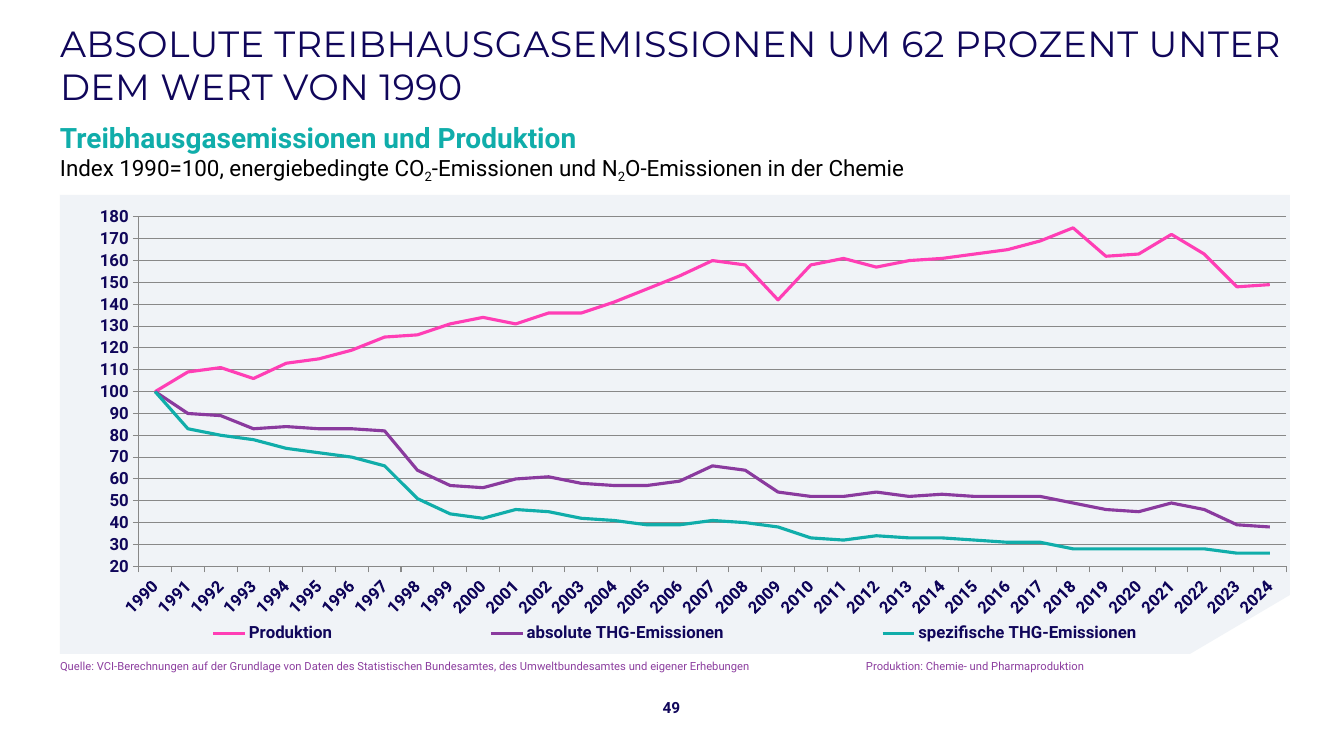
from dataclasses import dataclass

from pptx import Presentation, oxml, util as u
from pptx.chart import data as chart_data
from pptx.dml.color import RGBColor
from pptx.enum import chart as ch, text as t
from pptx.oxml import ns

EMU_PER_PX = 914400 / 100.8

NAVY = RGBColor(0x10, 0x06, 0x5A)
TEAL = RGBColor(0x10, 0xAD, 0xAA)
PINK = RGBColor(0xFF, 0x3E, 0xB5)
PURPLE = RGBColor(0x8A, 0x3A, 0x9E)
SOURCE_PURPLE = RGBColor(0x8C, 0x3E, 0x9F)
BLACK = RGBColor(0, 0, 0)
GREY = RGBColor(0x88, 0x88, 0x88)
PANEL = RGBColor(0xF0, 0xF3, 0xF7)

BODY_FONT = "Roboto"
TITLE = "ABSOLUTE TREIBHAUSGASEMISSIONEN UM 62 PROZENT UNTER DEM WERT VON 1990"
PANEL_OUTLINE = [(60, 195), (1290, 195), (1290, 595), (1190, 654), (60, 654)]
REMARK_TAB = 806
YEARS = range(1990, 2025)


@dataclass(frozen=True)
class Label:
    """Text box in px; each run is a (text, baseline in 1/1000 percent) pair."""
    box: tuple[int, int, int, int]
    runs: list[tuple[str, int]]
    size: int
    color: RGBColor
    bold: bool = False
    align: t.PP_ALIGN = t.PP_ALIGN.LEFT
    anchor: t.MSO_ANCHOR = t.MSO_ANCHOR.TOP
    tab: int = 0


@dataclass(frozen=True)
class Curve:
    name: str
    color: RGBColor
    values: list[int]


LABELS = [
    Label((60, 120, 1230, 31), [("Treibhausgasemissionen und Produktion", 0)],
          20, TEAL, bold=True),
    Label((60, 154, 1230, 28),
          [("Index 1990=100, energiebedingte CO", 0), ("2", -25000),
           ("-Emissionen und N", 0), ("2", -25000),
           ("O-Emissionen in der Chemie", 0)], 16, BLACK),
    Label((60, 659, 1111, 13),
          [("Quelle: VCI-Berechnungen auf der Grundlage von Daten des Statistischen "
            "Bundesamtes, des Umweltbundesamtes und eigener Erhebungen"
            "\tProduktion: Chemie- und Pharmaproduktion", 0)],
          8, SOURCE_PURPLE, tab=REMARK_TAB),
    Label((642, 693, 59, 28), [("49", 0)], 11, NAVY, bold=True,
          align=t.PP_ALIGN.CENTER, anchor=t.MSO_ANCHOR.MIDDLE),
]

CURVES = [
    Curve("Produktion", PINK,
          [100, 109, 111, 106, 113, 115, 119, 125, 126, 131, 134, 131,
           136, 136, 141, 147, 153, 160, 158, 142, 158, 161, 157, 160,
           161, 163, 165, 169, 175, 162, 163, 172, 163, 148, 149]),
    Curve("absolute THG-Emissionen", PURPLE,
          [100, 90, 89, 83, 84, 83, 83, 82, 64, 57, 56, 60,
           61, 58, 57, 57, 59, 66, 64, 54, 52, 52, 54, 52,
           53, 52, 52, 52, 49, 46, 45, 49, 46, 39, 38]),
    Curve("spezifische THG-Emissionen", TEAL,
          [100, 83, 80, 78, 74, 72, 70, 66, 51, 44, 42, 46,
           45, 42, 41, 39, 39, 41, 40, 38, 33, 32, 34, 33,
           33, 32, 31, 31, 28, 28, 28, 28, 28, 26, 26]),
]


def px(length: int) -> u.Emu:
    return u.Emu(round(length * EMU_PER_PX))


def set_all(target, values: dict) -> None:
    for name, value in values.items():
        setattr(target, name, value)


def set_font(font, size: int, color: RGBColor, bold: bool = False,
             name: str = BODY_FONT) -> None:
    set_all(font, {"size": u.Pt(size), "bold": bold, "name": name})
    font.color.rgb = color


def set_frame(frame, anchor: t.MSO_ANCHOR, margin_y: int = 0) -> None:
    set_all(frame, {"word_wrap": True, "auto_size": t.MSO_AUTO_SIZE.NONE,
                    "vertical_anchor": anchor,
                    "margin_left": 0, "margin_right": 0,
                    "margin_top": px(margin_y), "margin_bottom": px(margin_y)})


def add_panel(slide) -> None:
    builder = slide.shapes.build_freeform(*PANEL_OUTLINE[0], scale=EMU_PER_PX)
    builder.add_line_segments(PANEL_OUTLINE[1:], close=True)
    panel = builder.convert_to_shape()
    panel.shadow.inherit = False
    panel.fill.solid()
    panel.fill.fore_color.rgb = PANEL
    panel.line.fill.background()


def fill_title(title) -> None:
    set_all(title, dict(zip(("left", "top", "width", "height"),
                            map(px, (60, 15, 1230, 99)))))
    set_frame(title.text_frame, t.MSO_ANCHOR.MIDDLE, margin_y=4)
    headline = title.text_frame.paragraphs[0]
    headline.alignment = t.PP_ALIGN.LEFT
    run = headline.add_run()
    run.text = TITLE
    set_font(run.font, 26, NAVY, name="Montserrat")
    run._r.get_or_add_rPr().set("spc", "30")


def add_label(slide, label: Label) -> None:
    frame = slide.shapes.add_textbox(*map(px, label.box)).text_frame
    set_frame(frame, label.anchor)
    paragraph = frame.paragraphs[0]
    paragraph.alignment = label.align
    if label.tab:
        paragraph._p.get_or_add_pPr().append(oxml.parse_xml(
            f'<a:tabLst {ns.nsdecls("a")}><a:tab pos="{px(label.tab)}" algn="l"/></a:tabLst>'))
    for words, baseline in label.runs:
        run = paragraph.add_run()
        run.text = words
        set_font(run.font, label.size, label.color, label.bold)
        if baseline:
            run._r.get_or_add_rPr().set("baseline", str(baseline))


def place(part, index: int, target: str, **fractions: float) -> None:
    """Give a chart part a fixed place, in fractions of the chart."""
    for old in part.findall(ns.qn("c:layout")):
        part.remove(old)
    inner = f'<c:layoutTarget val="{target}"/>' if target else ""
    modes = "".join(f'<c:{side}Mode val="edge"/>' for side in "xy")
    sizes = "".join(f'<c:{key} val="{value}"/>' for key, value in fractions.items())
    part.insert(index, oxml.parse_xml(
        f'<c:layout {ns.nsdecls("c")}><c:manualLayout>{inner}{modes}{sizes}'
        '</c:manualLayout></c:layout>'))


def add_emissions_chart(slide) -> None:
    index_data = chart_data.CategoryChartData(number_format="0")
    index_data.categories = [str(year) for year in YEARS]
    for curve in CURVES:
        index_data.add_series(curve.name, curve.values)
    chart = slide.shapes.add_chart(ch.XL_CHART_TYPE.LINE,
                                   *map(px, (60, 207, 1230, 444)), index_data).chart
    set_all(chart, {"has_title": False, "has_legend": True})
    set_font(chart.font, 12, NAVY, bold=True)

    # Curves
    chart.plots[0].vary_by_categories = False
    for series, curve in zip(chart.plots[0].series, CURVES):
        series.smooth = False
        series.marker.style = ch.XL_MARKER_STYLE.NONE
        series.format.line.width = u.Pt(2.25)
        series.format.line.color.rgb = curve.color

    # Axes and grid
    years, index = chart.category_axis, chart.value_axis
    set_all(index, {"minimum_scale": 20, "maximum_scale": 180, "major_unit": 10,
                    "has_major_gridlines": True})
    set_all(index.tick_labels, {"number_format": "0", "number_format_is_linked": False})
    for axis in (years, index):
        set_all(axis, {"major_tick_mark": ch.XL_TICK_MARK.OUTSIDE,
                       "minor_tick_mark": ch.XL_TICK_MARK.NONE})
        set_font(axis.tick_labels.font, 12, NAVY, bold=True)
    for line in (years.format.line, index.format.line, index.major_gridlines.format.line):
        line.width = u.Pt(0.75)
        line.color.rgb = GREY
    years._element.find(f'{ns.qn("c:txPr")}/{ns.qn("a:bodyPr")}').set("rot", "-2700000")
    if index._element.find(ns.qn("c:crossBetween")) is None:
        index._element.find(ns.qn("c:crosses")).addnext(oxml.parse_xml(
            f'<c:crossBetween {ns.nsdecls("c")} val="between"/>'))

    # Legend and plot placement
    set_all(chart.legend, {"position": ch.XL_LEGEND_POSITION.BOTTOM,
                           "include_in_layout": False})
    set_font(chart.legend.font, 12, NAVY, bold=True)
    place(chart.legend._element, 1, "", x=0, y=0.92, w=1, h=0.08)
    space = chart._chartSpace
    area = space.chart.plotArea
    place(area, 0, "inner", x=0.064, y=0.02, w=0.933, h=0.789)

    # Transparent background
    clear = f'<c:spPr {ns.nsdecls("c", "a")}><a:noFill/><a:ln><a:noFill/></a:ln></c:spPr>'
    area.append(oxml.parse_xml(clear))
    space.chart.addnext(oxml.parse_xml(clear))


def main() -> None:
    deck = Presentation()
    deck.slide_width, deck.slide_height = px(1344), px(756)
    slide = deck.slides.add_slide(deck.slide_layouts[5])
    add_panel(slide)
    fill_title(slide.shapes.title)
    for label in LABELS:
        add_label(slide, label)
    add_emissions_chart(slide)
    deck.save("out.pptx")


if __name__ == "__main__":
    main()
